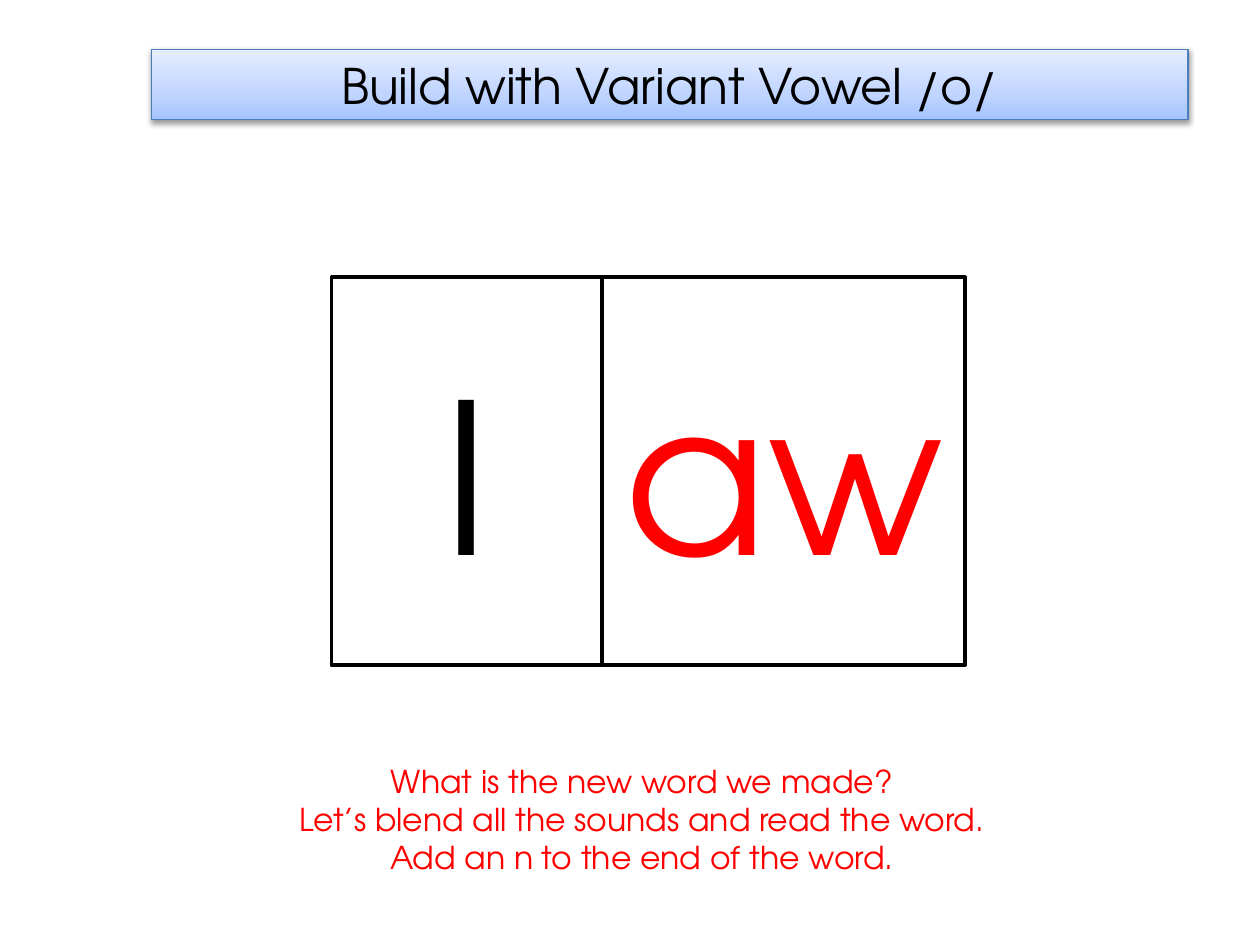
from lxml import etree
from pptx import Presentation
from pptx.dml.color import RGBColor
from pptx.enum.shapes import MSO_SHAPE
from pptx.enum.text import MSO_ANCHOR, MSO_AUTO_SIZE, PP_ALIGN
from pptx.oxml import parse_xml
from pptx.util import Inches, Pt

RECTANGLE = MSO_SHAPE.RECTANGLE
MIDDLE, TOP = MSO_ANCHOR.MIDDLE, MSO_ANCHOR.TOP
CENTER = PP_ALIGN.CENTER
NO_FIT, GROW = MSO_AUTO_SIZE.NONE, MSO_AUTO_SIZE.SHAPE_TO_FIT_TEXT

BLACK = RGBColor(0x00, 0x00, 0x00)
WHITE = RGBColor(0xFF, 0xFF, 0xFF)
RED = RGBColor(0xFF, 0x00, 0x00)
BANNER_LINE = RGBColor(0x4B, 0x7E, 0xBC)
BANNER_STOPS = [
    (0, RGBColor(0xA4, 0xC4, 0xFF)),
    (35, RGBColor(0xBF, 0xD4, 0xFF)),
    (100, RGBColor(0xE6, 0xEE, 0xFF)),
]

FONT = "TeX Gyre Adventor"
NAMESPACE = "http://schemas.openxmlformats.org/drawingml/2006/main"
PAGE_WIDTH, PAGE_HEIGHT = 10, 7.5

# Regions as left, top, width, height in inches
BANNER_BOX = (1.2, 0.39, 8.23, 0.56)
LETTER_BOX = (2.63, 2.2, 5.03, 3.08)
PROMPT_BOX = (1.61, 6, 6.97, 1.01)

# Letter tiles as text, colour, share of the row's width
TILES = [("l", BLACK, 2.15 / 5.03), ("aw", RED, 2.88 / 5.03)]
PROMPTS = [
    "What is the new word we made?",
    "Let’s blend all the sounds and read the word.",
    "Add an n to the end of the word.",
]


def write_text(shape, lines, size, color, anchor=MIDDLE, fit=NO_FIT):
    """Fill a shape with centred paragraphs in one style."""
    frame = shape.text_frame
    frame.text = "\n".join(lines)
    frame_format = {"word_wrap": True, "auto_size": fit, "vertical_anchor": anchor}
    for name, value in frame_format.items():
        setattr(frame, name, value)
    for para in frame.paragraphs:
        para.alignment = CENTER
        for span in para.runs:
            for name, value in {"name": FONT, "size": Pt(size), "bold": False}.items():
                setattr(span.font, name, value)
            span.font.color.rgb = color


def set_line(shape, color, width):
    shape.line.color.rgb = color
    shape.line.width = Pt(width)


def add_banner(page, box):
    """Title bar with a vertical gradient and a soft shadow."""
    title = page.shapes.title
    for name, value in zip(("left", "top", "width", "height"), box):
        setattr(title, name, Inches(value))
    write_text(title, ["Build with Variant Vowel /o/"], 28, BLACK)
    set_line(title, BANNER_LINE, 0.75)

    stops = "".join(
        f'<a:gs pos="{share * 1000}"><a:srgbClr val="{color}"/></a:gs>'
        for share, color in BANNER_STOPS
    )
    gradient = parse_xml(
        f'<a:gradFill xmlns:a="{NAMESPACE}" rotWithShape="1">'
        f'<a:gsLst>{stops}</a:gsLst><a:lin ang="16200000" scaled="0"/></a:gradFill>'
    )
    outline = title.line._get_or_add_ln()
    outline.addprevious(gradient)

    effects = etree.Element(f"{{{NAMESPACE}}}effectLst")
    shadow = etree.SubElement(
        effects, f"{{{NAMESPACE}}}outerShdw", blurRad=str(Pt(3.1)),
        dist=str(Pt(1.6)), dir="5400000", rotWithShape="0",
    )
    shade = etree.SubElement(shadow, f"{{{NAMESPACE}}}srgbClr", val=str(BLACK))
    etree.SubElement(shade, f"{{{NAMESPACE}}}alpha", val="38000")
    outline.addnext(effects)


def add_letter_tiles(page, box):
    """Adjoining tiles that share the width of the row."""
    left, top, width, height = box
    for letters, color, share in TILES:
        tile_width = width * share
        tile = page.shapes.add_shape(
            RECTANGLE, *map(Inches, (left, top, tile_width, height))
        )
        tile.shadow.inherit = False
        tile.fill.solid()
        tile.fill.fore_color.rgb = WHITE
        set_line(tile, BLACK, 2)
        write_text(tile, [letters], 120, color)
        left += tile_width


def add_prompts(page, box):
    """Teacher's questions below the tiles."""
    prompt = page.shapes.add_textbox(*map(Inches, box))
    write_text(prompt, PROMPTS, 18, RED, TOP, GROW)


def main():
    deck = Presentation()
    deck.slide_width, deck.slide_height = Inches(PAGE_WIDTH), Inches(PAGE_HEIGHT)
    page = deck.slides.add_slide(deck.slide_layouts.get_by_name("Title Only"))
    add_banner(page, BANNER_BOX)
    add_letter_tiles(page, LETTER_BOX)
    add_prompts(page, PROMPT_BOX)
    deck.save("out.pptx")


if __name__ == "__main__":
    main()
